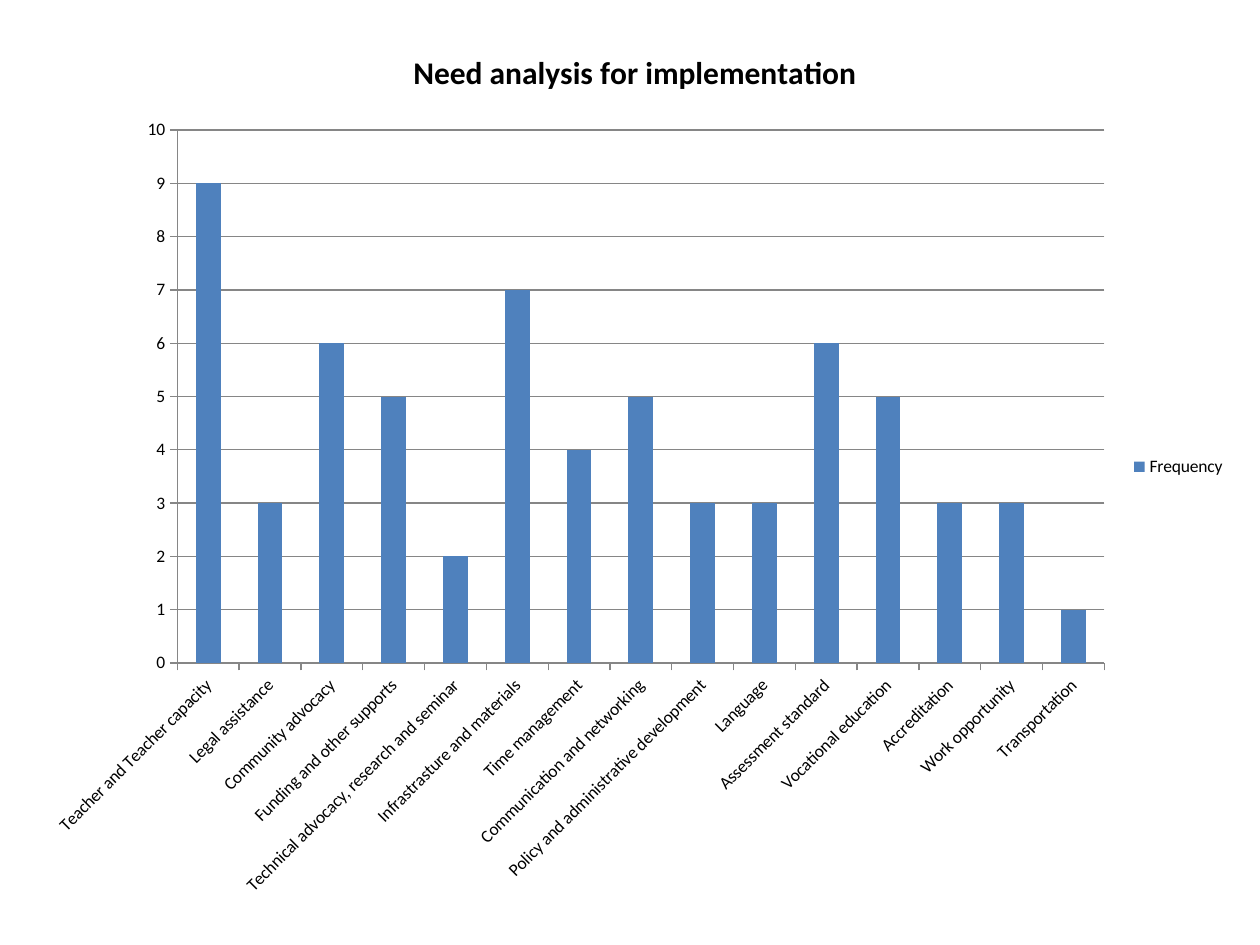
import pptx
import pptx.util
import pptx.chart.data
import pptx.dml.color
import pptx.enum.chart

WIDE, HIGH = 10, 7.5
HUES = {"text": "000000", "bar": "4F81BD", "line": "868686"}
FONT = {"name": "Calibri", "size": pptx.util.Pt(10), "bold": False}
HEAD = {"name": "Calibri", "size": pptx.util.Pt(18), "bold": True}
TITLE = "Need analysis for implementation"
NEEDS = {
    "Teacher and Teacher capacity": 9,
    "Legal assistance": 3,
    "Community advocacy": 6,
    "Funding and other supports": 5,
    "Technical advocacy, research and seminar": 2,
    "Infrastrasture and materials": 7,
    "Time management": 4,
    "Communication and networking": 5,
    "Policy and administrative development": 3,
    "Language": 3,
    "Assessment standard": 6,
    "Vocational education": 5,
    "Accreditation": 3,
    "Work opportunity": 3,
    "Transportation": 1,
}


def hue(key):
    return pptx.dml.color.RGBColor.from_string(HUES[key])


def put(item, form):
    for name, value in form.items():
        setattr(item, name, value)


def style(font, form):
    put(font, form)
    font.color.rgb = hue("text")


def rule(line):
    line.width = pptx.util.Pt(0.75)
    line.color.rgb = hue("line")


def add_chart(slide, left, top, width, height):
    """Add the column chart; the box is given as shares of the slide."""
    data = pptx.chart.data.CategoryChartData()
    data.categories = list(NEEDS)
    data.add_series("Frequency", list(NEEDS.values()))
    box = [pptx.util.Inches(share * side) for share, side in
           ((left, WIDE), (top, HIGH), (width, WIDE), (height, HIGH))]
    kind = pptx.enum.chart.XL_CHART_TYPE.COLUMN_CLUSTERED
    chart = slide.shapes.add_chart(kind, *box, data).chart
    style(chart.font, FONT)
    return chart


def set_title(chart):
    chart.has_title = True
    chart.chart_title.include_in_layout = False
    frame = chart.chart_title.text_frame
    frame.text = TITLE
    style(frame.paragraphs[0].runs[0].font, HEAD)


def set_bars(chart):
    plot = chart.plots[0]
    put(plot, {"gap_width": 150, "vary_by_categories": False})
    fill = plot.series[0].format.fill
    fill.solid()
    fill.fore_color.rgb = hue("bar")


def set_axis(axis, form):
    put(axis, {"major_tick_mark": pptx.enum.chart.XL_TICK_MARK.OUTSIDE,
               "minor_tick_mark": pptx.enum.chart.XL_TICK_MARK.NONE, **form})
    rule(axis.format.line)
    style(axis.tick_labels.font, FONT)
    if axis.has_major_gridlines:
        rule(axis.major_gridlines.format.line)


def slant(chart, angle):
    """Turn the category labels; the unit is 1/60000 of a degree."""
    for body in chart.category_axis._element.xpath("c:txPr/a:bodyPr"):
        body.set("rot", str(angle * 60000))


def set_legend(chart):
    chart.has_legend = True
    put(chart.legend, {
        "position": pptx.enum.chart.XL_LEGEND_POSITION.RIGHT,
        "include_in_layout": False,
    })
    style(chart.legend.font, FONT)


def main():
    deck = pptx.Presentation()
    put(deck, {"slide_width": pptx.util.Inches(WIDE),
               "slide_height": pptx.util.Inches(HIGH)})
    slide = deck.slides.add_slide(deck.slide_layouts[6])

    # Chart with its title and bars
    chart = add_chart(slide, 0.025, 0.022, 0.958, 0.944)
    set_title(chart)
    set_bars(chart)

    # Axes and legend
    set_axis(chart.category_axis, {"has_major_gridlines": False})
    set_axis(chart.value_axis, {
        "has_major_gridlines": True, "minimum_scale": 0,
        "maximum_scale": 10, "major_unit": 1})
    slant(chart, -45)
    set_legend(chart)

    deck.save("out.pptx")


if __name__ == "__main__":
    main()
